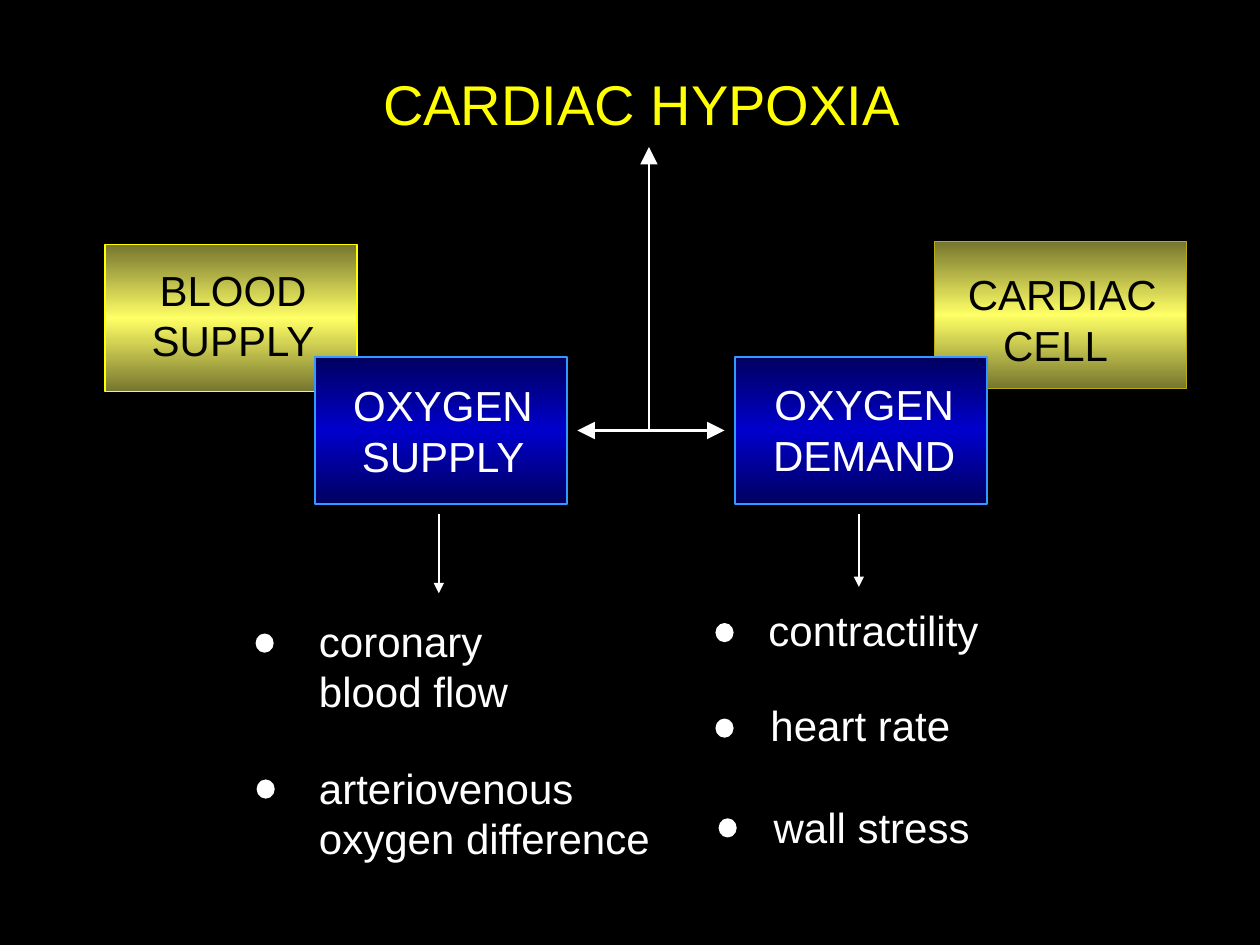
from copy import deepcopy
from typing import NamedTuple

from pptx import Presentation
from pptx.dml.color import RGBColor
from pptx.enum.shapes import MSO_CONNECTOR, MSO_SHAPE
from pptx.enum.text import MSO_AUTO_SIZE, PP_ALIGN
from pptx.oxml.ns import qn
from pptx.util import Inches, Pt

RECTANGLE, OVAL = MSO_SHAPE.RECTANGLE, MSO_SHAPE.OVAL
STRAIGHT = MSO_CONNECTOR.STRAIGHT
LEFT, CENTER = PP_ALIGN.LEFT, PP_ALIGN.CENTER
FIT_SHAPE = MSO_AUTO_SIZE.SHAPE_TO_FIT_TEXT

BLACK = RGBColor(0x00, 0x00, 0x00)
WHITE = RGBColor(0xFF, 0xFF, 0xFF)
YELLOW = RGBColor(0xFF, 0xFF, 0x00)
PALE_YELLOW = RGBColor(0xFF, 0xFF, 0x66)
OLIVE = RGBColor(0x76, 0x76, 0x2F)
GOLD = RGBColor(0xBB, 0xAB, 0x13)
BLUE = RGBColor(0x00, 0x00, 0xCC)
NAVY = RGBColor(0x00, 0x00, 0x5E)
SKY = RGBColor(0x33, 0x99, 0xFF)

# The page is a grid of 120 columns by 90 rows
WIDTH, HEIGHT = Inches(10), Inches(7.5)
COLUMN, ROW = WIDTH / 120, HEIGHT / 90
BOX_COLUMNS, BOX_ROWS = 24, 14
DOT_COLUMNS, DOT_ROWS = 1.6, 1.7
LINE_ROWS, PADDING_ROWS = 4.8, 1.2


class Box(NamedTuple):
    column: float
    row: float
    edge: RGBColor
    middle: RGBColor
    outline: RGBColor


class Label(NamedTuple):
    column: float
    row: float
    columns: float
    lines: tuple[str, ...]
    color: RGBColor = WHITE
    align: PP_ALIGN = LEFT
    size: int = 24
    last_indent: float = 0
    soft_break: bool = False


class Bullet(NamedTuple):
    column: float
    row: float
    label: Label


class Arrow(NamedTuple):
    start: tuple[float, float]
    end: tuple[float, float]
    head_size: str
    both_ends: bool = False


BOXES = (
    Box(10, 23.3, OLIVE, PALE_YELLOW, YELLOW),
    Box(89, 23, OLIVE, PALE_YELLOW, GOLD),
    Box(30, 34, NAVY, BLUE, SKY),
    Box(70, 34, NAVY, BLUE, SKY),
)
LABELS = (
    Label(35.3, 6, 53.2, ("CARDIAC HYPOXIA",), YELLOW, size=32),
    Label(13.1, 24.6, 18.2, ("BLOOD", "SUPPLY"), BLACK, CENTER, soft_break=True),
    Label(91, 25, 20.4, ("CARDIAC", "CELL"), BLACK, last_indent=3.35),
    Label(32.4, 35.6, 19.6, ("OXYGEN", "SUPPLY"), align=CENTER),
    Label(72.4, 35.5, 19.8, ("OXYGEN", "DEMAND"), align=CENTER),
)
BULLETS = (
    Bullet(24.4, 60.4, Label(29.2, 58, 20.4, ("coronary", "blood flow"))),
    Bullet(24.5, 74.3, Label(29.2, 72, 34.1, ("arteriovenous", "oxygen difference"))),
    Bullet(68.2, 59.4, Label(72, 57, 22.4, ("contractility",))),
    Bullet(68.2, 68.5, Label(72.2, 66, 19.6, ("heart rate",))),
    Bullet(68.5, 78, Label(72.5, 75.7, 21.1, ("wall stress",))),
)
ARROWS = (
    Arrow((55, 41), (69, 41), "lg", both_ends=True),
    Arrow((61.8, 41), (61.8, 14), "lg"),
    Arrow((41.8, 49), (41.8, 56.5), "med"),
    Arrow((81.8, 49), (81.8, 55.9), "med"),
)


def place(column: float, row: float) -> tuple[int, int]:
    return round(column * COLUMN), round(row * ROW)


def draw_box(page, box: Box) -> None:
    shape = page.shapes.add_shape(
        RECTANGLE, *place(box.column, box.row), *place(BOX_COLUMNS, BOX_ROWS))
    shape.shadow.inherit = False
    shape.line.color.rgb = box.outline
    shape.line.width = Pt(0.75)
    # Three-stop gradient: edge, middle, edge
    shape.fill.gradient()
    shape.fill.gradient_angle = 90
    stop_list = shape._element.spPr.find(qn("a:gradFill")).find(qn("a:gsLst"))
    stop_list.insert(1, deepcopy(stop_list[0]))
    colors = (box.edge, box.middle, box.edge)
    for stop, position, color in zip(shape.fill.gradient_stops, (0, 0.5, 1), colors):
        stop.position = position
        stop.color.rgb = color


def draw_label(page, label: Label) -> None:
    line_count = len(label.lines)
    rows = PADDING_ROWS + LINE_ROWS * line_count * label.size / 24
    box = page.shapes.add_textbox(
        *place(label.column, label.row), *place(label.columns, rows))
    frame = box.text_frame
    frame.word_wrap = False
    frame.auto_size = FIT_SHAPE
    para = frame.paragraphs[0]
    para.alignment = label.align
    for index, text in enumerate(label.lines):
        if index and label.soft_break:
            para.add_line_break()
        elif index:
            para = frame.add_paragraph()
            para.alignment = label.align
        span = para.add_run()
        span.text = text
        span.font.name = "Arial"
        span.font.size = Pt(label.size)
        span.font.color.rgb = label.color
    if label.last_indent:
        para._p.get_or_add_pPr().set("marL", str(round(label.last_indent * COLUMN)))


def draw_bullet(page, bullet: Bullet) -> None:
    dot = page.shapes.add_shape(
        OVAL, *place(bullet.column, bullet.row), *place(DOT_COLUMNS, DOT_ROWS))
    dot.shadow.inherit = False
    dot.fill.solid()
    dot.fill.fore_color.rgb = WHITE
    dot.line.color.rgb = WHITE
    dot.line.width = Pt(0.75)
    draw_label(page, bullet.label)


def draw_arrow(page, arrow: Arrow) -> None:
    connector = page.shapes.add_connector(
        STRAIGHT, *place(*arrow.start), *place(*arrow.end))
    connector.line.color.rgb = WHITE
    connector.line.width = Pt(1.5)
    properties = connector._element.spPr
    outline = properties.find(qn("a:ln"))
    for tag in ("a:headEnd", "a:tailEnd") if arrow.both_ends else ("a:tailEnd",):
        tip = outline.makeelement(qn(tag), {
            "type": "triangle", "w": arrow.head_size, "len": arrow.head_size})
        outline.append(tip)
    properties.append(properties.makeelement(qn("a:effectLst"), {}))


def main() -> None:
    deck = Presentation()
    deck.slide_width, deck.slide_height = WIDTH, HEIGHT
    page = deck.slides.add_slide(deck.slide_layouts[6])
    page.background.fill.solid()
    page.background.fill.fore_color.rgb = BLACK

    # Boxes lie beneath their labels
    for box in BOXES:
        draw_box(page, box)
    for label in LABELS:
        draw_label(page, label)
    for arrow in ARROWS:
        draw_arrow(page, arrow)
    for bullet in BULLETS:
        draw_bullet(page, bullet)
    deck.save("out.pptx")


if __name__ == "__main__":
    main()
